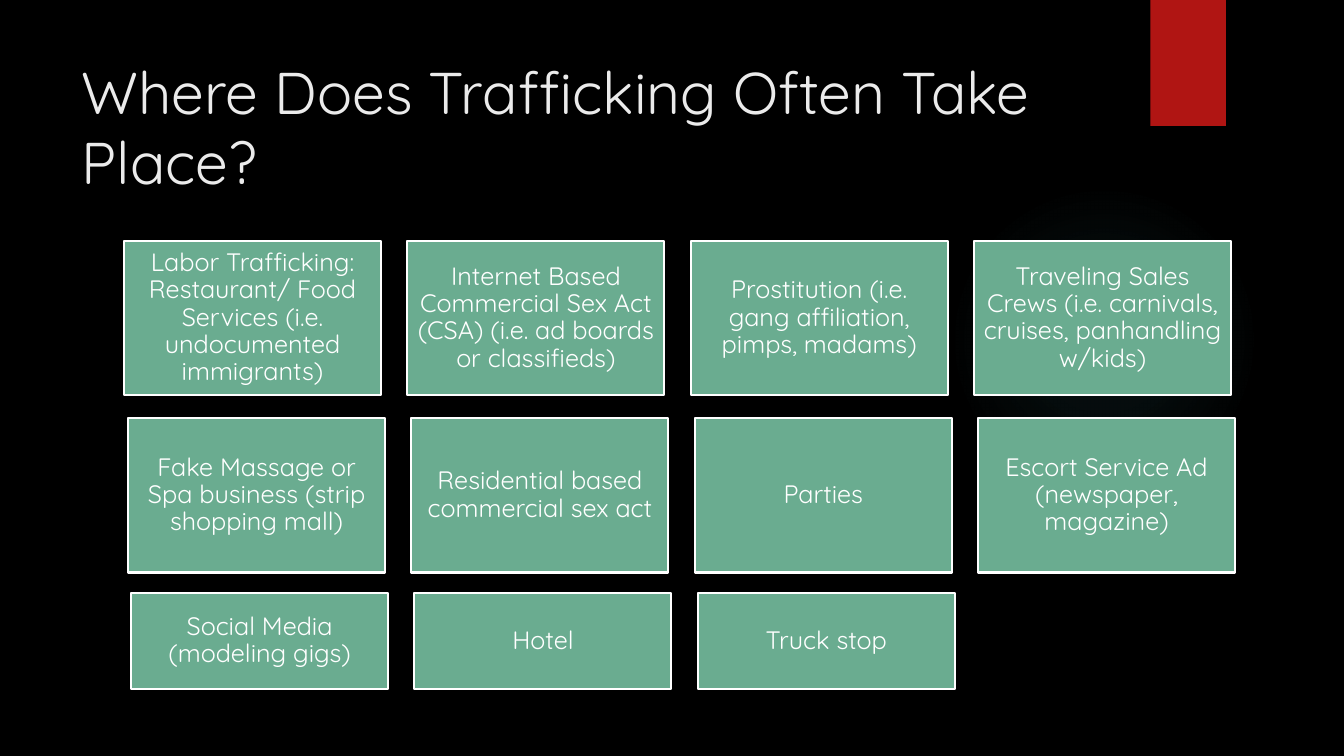
from lxml.etree import SubElement
from pptx import Presentation
from pptx.dml.color import RGBColor
from pptx.enum.shapes import MSO_SHAPE
from pptx.enum.text import MSO_ANCHOR, MSO_AUTO_SIZE, PP_ALIGN
from pptx.oxml.ns import qn
from pptx.util import Inches, Pt

COLORS = {"background": "000000", "glow": "50B9C1", "ribbon": "B01513",
          "title": "EBEBEB", "card": "6AAC90", "white": "FFFFFF"}
FONT = "Quicksand"
CARD_WIDTH = 2.55
COLUMN_PITCH = 2.81
ROWS = [
    (1.23, 2.39, 1.53, [
        "Labor Trafficking: Restaurant/ Food Services (i.e. undocumented immigrants)",
        "Internet Based Commercial Sex Act (CSA) (i.e. ad boards or classifieds)",
        "Prostitution (i.e. gang affiliation, pimps, madams)",
        "Traveling Sales Crews (i.e. carnivals, cruises, panhandling w/kids)"]),
    (1.27, 4.15, 1.53, [
        "Fake Massage or Spa business (strip shopping mall)",
        "Residential based commercial sex act",
        "Parties",
        "Escort Service Ad (newspaper, magazine)"]),
    (1.3, 5.88, 0.96, ["Social Media (modeling gigs)", "Hotel", "Truck stop"]),
]


def color(name):
    """Return the named palette colour."""
    return RGBColor.from_string(COLORS[name])


def add_plain_shape(page, kind, box, fill=None):
    """Add a shape without shadow or outline in the given box."""
    shape = page.shapes.add_shape(kind, *map(Inches, box))
    shape.shadow.inherit = False
    shape.line.fill.background()
    if fill:
        shape.fill.solid()
        shape.fill.fore_color.rgb = color(fill)
    return shape


def add_span(paragraph, text, size, fill):
    """Add one formatted run to a paragraph."""
    span = paragraph.add_run()
    span.text = text
    span.font.name = FONT
    span.font.size = Pt(size)
    span.font.color.rgb = color(fill)


def add_glow(page, box):
    """Add an ellipse with a faint radial gradient."""
    glow = add_plain_shape(page, MSO_SHAPE.OVAL, box)
    glow.fill.gradient()
    gradient = glow.fill._xPr.find(qn("a:gradFill"))
    for child in list(gradient):
        gradient.remove(child)
    stops = SubElement(gradient, qn("a:gsLst"))
    for position, opacity in ((0, 7), (36, 6), (69, 0)):
        stop = SubElement(stops, qn("a:gs"), pos=str(position * 1000))
        tint = SubElement(stop, qn("a:srgbClr"), val=COLORS["glow"])
        SubElement(tint, qn("a:alpha"), val=str(opacity * 1000))
    radial = SubElement(gradient, qn("a:path"), path="circle")
    SubElement(radial, qn("a:fillToRect"), l="50000", t="50000", r="50000", b="50000")


def add_title(page, box, text):
    """Place and format the title placeholder."""
    title = page.shapes.title
    title.left, title.top, title.width, title.height = map(Inches, box)
    frame = title.text_frame
    frame.auto_size = MSO_AUTO_SIZE.NONE
    frame.word_wrap = True
    frame.vertical_anchor = MSO_ANCHOR.TOP
    frame.paragraphs[0].alignment = PP_ALIGN.LEFT
    add_span(frame.paragraphs[0], text, 42, "title")


def add_card(page, box, text):
    """Add one outlined card with centred text."""
    card = add_plain_shape(page, MSO_SHAPE.RECTANGLE, box, "card")
    card.line.color.rgb = color("white")
    card.line.width = Pt(1.5)
    frame = card.text_frame
    frame.word_wrap = True
    frame.vertical_anchor = MSO_ANCHOR.MIDDLE
    frame.margin_left = frame.margin_right = Inches(0.07)
    frame.margin_top = frame.margin_bottom = Inches(0.07)
    paragraph = frame.paragraphs[0]
    paragraph.alignment = PP_ALIGN.CENTER
    paragraph.line_spacing = 0.9
    add_span(paragraph, text, 18, "white")


def add_card_row(page, left, top, height, places):
    """Add a row of equally spaced cards."""
    for column, place in enumerate(places):
        add_card(page, (left + column * COLUMN_PITCH, top, CARD_WIDTH, height), place)


def main():
    """Build and save the deck."""
    deck = Presentation()
    deck.slide_width, deck.slide_height = Inches(13.33), Inches(7.5)
    page = deck.slides.add_slide(deck.slide_layouts[5])
    page.background.fill.solid()
    page.background.fill.fore_color.rgb = color("background")
    add_glow(page, (9.41, 1.83, 3.08, 3.08))
    add_plain_shape(page, MSO_SHAPE.RECTANGLE, (11.41, 0, 0.75, 1.25), "ribbon")
    add_title(page, (0.71, 0.5, 10.29, 1.53), "Where Does Trafficking Often Take Place?")
    for row in ROWS:
        add_card_row(page, *row)
    deck.save("out.pptx")


if __name__ == "__main__":
    main()
